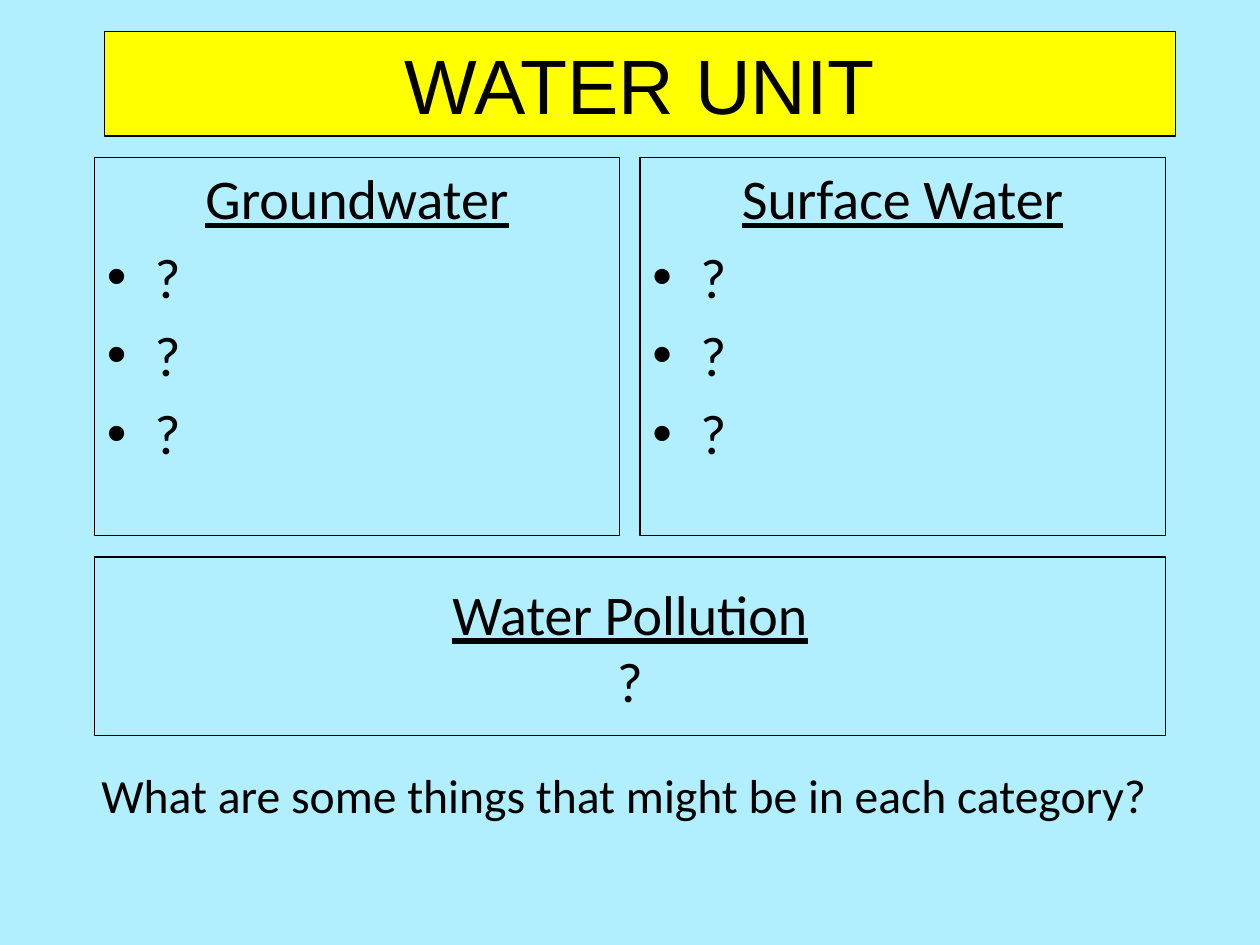
from dataclasses import dataclass

import pptx
import pptx.dml.color
import pptx.enum.shapes
import pptx.enum.text
import pptx.oxml
import pptx.oxml.ns
import pptx.util

Inches = pptx.util.Inches
Pt = pptx.util.Pt
ALIGN = pptx.enum.text.PP_ALIGN
ANCHOR = pptx.enum.text.MSO_ANCHOR

COLORS = {"background": "B1EEFE", "banner": "FFFF00", "ink": "000000"}
BODY_FONT = "Calibri"
HANGING = Inches(0.38)


@dataclass
class Panel:
    heading: str
    left: float
    top: float
    width: float
    height: float
    items: tuple[str, ...]
    bulleted: bool


PANELS = [
    Panel("Groundwater", 0.75, 1.25, 4.17, 3, ("?",) * 3, True),
    Panel("Surface Water", 5.08, 1.25, 4.17, 3, ("?",) * 3, True),
    Panel("Water Pollution", 0.75, 4.42, 8.5, 1.42, ("?",), False),
]


def rgb(name: str) -> pptx.dml.color.RGBColor:
    return pptx.dml.color.RGBColor.from_string(COLORS[name])


def place(sp, left: float, top: float, width: float, height: float) -> None:
    sp.left, sp.top = Inches(left), Inches(top)
    sp.width, sp.height = Inches(width), Inches(height)


def outline(sp) -> None:
    sp.line.color.rgb = rgb("ink")
    sp.line.width = Pt(0.75)


def set_frame(tf, anchor) -> None:
    tf.word_wrap = True
    tf.auto_size = pptx.enum.text.MSO_AUTO_SIZE.NONE
    tf.vertical_anchor = anchor


def add_text(p, text: str, size: float, font: str = BODY_FONT,
             underline: bool = False, align=ALIGN.CENTER) -> None:
    p.alignment = align
    r = p.add_run()
    r.text = text
    r.font.name = font
    r.font.size = Pt(size)
    r.font.color.rgb = rgb("ink")
    r.font.underline = underline


def hang(p) -> None:
    pPr = p._p.get_or_add_pPr()
    pPr.set("marL", str(HANGING))
    pPr.set("indent", str(-HANGING))


def add_bullet(p) -> None:
    p.space_before = Pt(6.4)
    ns = pptx.oxml.ns.nsdecls("a")
    color = f'<a:buClr {ns}><a:srgbClr val="{COLORS["ink"]}"/></a:buClr>'
    for xml in (color, f'<a:buFont {ns} typeface="Arial"/>', f'<a:buChar {ns} char="•"/>'):
        p._p.get_or_add_pPr().append(pptx.oxml.parse_xml(xml))


def add_title(s, text: str) -> None:
    sp = s.shapes.title
    place(sp, 0.83, 0.25, 8.5, 0.83)
    sp.fill.solid()
    sp.fill.fore_color.rgb = rgb("banner")
    outline(sp)
    set_frame(sp.text_frame, ANCHOR.MIDDLE)
    add_text(sp.text_frame.paragraphs[0], text, 44, "Arial")


def add_panel(s, panel: Panel) -> None:
    sp = s.shapes.add_shape(
        pptx.enum.shapes.MSO_SHAPE.RECTANGLE, Inches(panel.left), Inches(panel.top),
        Inches(panel.width), Inches(panel.height))
    sp.shadow.inherit = False
    sp.fill.background()
    outline(sp)
    tf = sp.text_frame
    set_frame(tf, ANCHOR.TOP if panel.bulleted else ANCHOR.MIDDLE)
    p = tf.paragraphs[0]
    add_text(p, panel.heading, 32, underline=True)
    if panel.bulleted:
        hang(p)
    for item in panel.items:
        p = tf.add_paragraph()
        add_text(p, item, 32, align=ALIGN.LEFT if panel.bulleted else ALIGN.CENTER)
        if panel.bulleted:
            hang(p)
            add_bullet(p)


def add_question(s, text: str) -> None:
    sp = s.shapes.add_textbox(Inches(0.58), Inches(5.92), Inches(8.75), Inches(0.83))
    set_frame(sp.text_frame, ANCHOR.MIDDLE)
    p = sp.text_frame.paragraphs[0]
    p.line_spacing = 0.9
    add_text(p, text, 27.2)


def main() -> None:
    prs = pptx.Presentation()
    prs.slide_width, prs.slide_height = Inches(10), Inches(7.5)
    s = prs.slides.add_slide(prs.slide_layouts[5])
    s.background.fill.solid()
    s.background.fill.fore_color.rgb = rgb("background")
    add_title(s, "WATER UNIT")
    for panel in PANELS:
        add_panel(s, panel)
    add_question(s, "What are some things that might be in each category?")
    prs.save("out.pptx")


if __name__ == "__main__":
    main()
